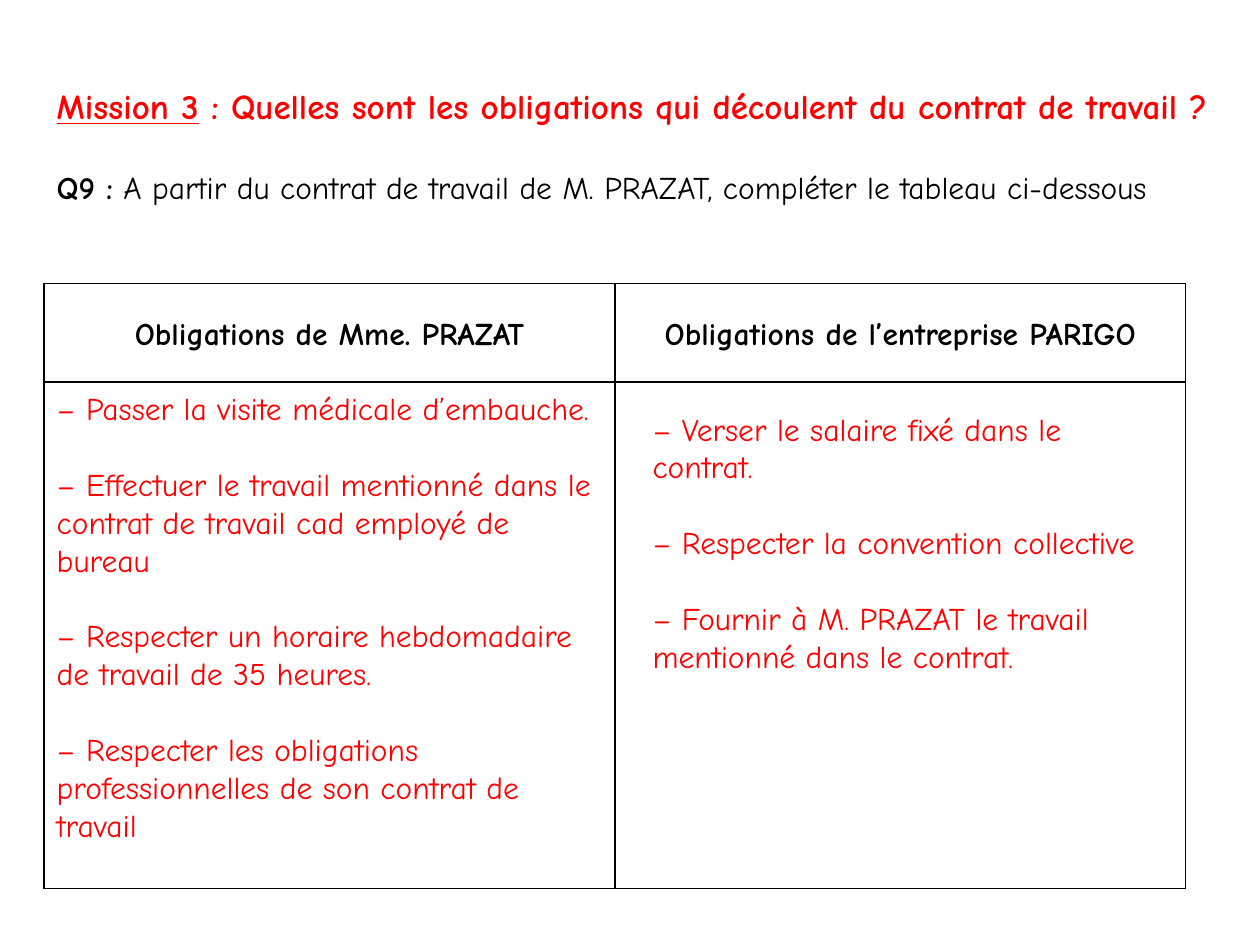
from lxml.etree import SubElement
from pptx import Presentation
from pptx.dml.color import RGBColor
from pptx.enum.text import MSO_ANCHOR, MSO_AUTO_SIZE, PP_ALIGN
from pptx.oxml.ns import qn
from pptx.util import Cm, Pt

FONT = "Comic Neue"
RED = RGBColor(0xFF, 0x00, 0x00)
BLACK = RGBColor(0x00, 0x00, 0x00)
LINE_GAP = Pt(21.7)

HEADINGS = ["Obligations de Mme. PRAZAT", "Obligations de l’entreprise PARIGO"]
EMPLOYEE_DUTIES = [
    "– Passer la visite médicale d’embauche.",
    "– Effectuer le travail mentionné dans le contrat de travail cad employé de bureau",
    "– Respecter un horaire hebdomadaire de travail de 35 heures.",
    "– Respecter les obligations professionnelles de son contrat de travail",
]
EMPLOYER_DUTIES = [
    "– Verser le salaire fixé dans le contrat.",
    "– Respecter la convention collective",
    "– Fournir à M. PRAZAT le travail mentionné dans le contrat.",
]


def style(span, size, color, bold=False, underline=False):
    span.font.name = FONT
    span.font.size = Pt(size)
    span.font.color.rgb = color
    span.font.bold = bold
    span.font.underline = underline


def place(holder, box, anchor):
    holder.left, holder.top, holder.width, holder.height = map(Cm, box)
    frame = holder.text_frame
    frame.word_wrap = True
    frame.auto_size = MSO_AUTO_SIZE.NONE
    frame.vertical_anchor = anchor
    return frame


def format_para(para, gap):
    para.alignment = PP_ALIGN.LEFT
    para.line_spacing = 1.0
    para.space_before = gap
    para.space_after = Pt(0)


def add_heading(page, box):
    """Mission title followed by the question."""
    frame = place(page.shapes.title, box, MSO_ANCHOR.MIDDLE)
    frame.margin_bottom = Cm(0.89)
    mission = frame.paragraphs[0]
    question = frame.add_paragraph()
    format_para(mission, Pt(0))
    format_para(question, Pt(24))
    parts = [
        (mission, "Mission 3", 20, RED, True, True),
        (mission, " : Quelles sont les obligations qui découlent du contrat de travail ?",
         20, RED, True, False),
        (question, "Q9 :", 18, BLACK, True, False),
        (question, " A partir du contrat de travail de M. PRAZAT, compléter le tableau ci-dessous",
         18, BLACK, False, False),
    ]
    for para, text, *look in parts:
        span = para.add_run()
        span.text = text
        style(span, *look)


def add_duties(holder, box, duties):
    """List of obligations, without bullets."""
    frame = place(holder, box, MSO_ANCHOR.TOP)
    frame.text = "\n".join(duties)
    for index, para in enumerate(frame.paragraphs):
        format_para(para, LINE_GAP if index else Pt(0))
        props = para._p.get_or_add_pPr()
        props.set("marL", "0")
        props.set("indent", "0")
        SubElement(props, qn("a:buNone"))
        style(para.runs[0], 18, RED)


def add_borders(cell):
    props = cell._tc.get_or_add_tcPr()
    for side in ("lnL", "lnR", "lnT", "lnB"):
        line = SubElement(props, qn(f"a:{side}"), w=str(Pt(1)))
        fill = SubElement(line, qn("a:solidFill"))
        SubElement(fill, qn("a:srgbClr"), val=str(BLACK))


def add_grid(page, box, head_height):
    """Two-column table with a heading row."""
    left, top, width, height = box
    table = page.shapes.add_table(2, 2, *map(Cm, box)).table
    table.first_row = table.horz_banding = False
    for column in table.columns:
        column.width = Cm(width / 2)
    table.rows[0].height = Cm(head_height)
    table.rows[1].height = Cm(height - head_height)
    for cell in table.iter_cells():
        add_borders(cell)
        cell.fill.background()
    for cell, text in zip(table.rows[0].cells, HEADINGS):
        cell.text_frame.text = text
        cell.vertical_anchor = MSO_ANCHOR.MIDDLE
        cell.margin_left = cell.margin_right = Cm(0.18)
        cell.margin_top = cell.margin_bottom = 0
        para = cell.text_frame.paragraphs[0]
        para.alignment = PP_ALIGN.CENTER
        para.line_spacing = 1.15
        style(para.runs[0], 18, BLACK, bold=True)


def main():
    deck = Presentation()
    deck.slide_width, deck.slide_height = Cm(25.4), Cm(19.05)
    page = deck.slides.add_slide(deck.slide_layouts.get_by_name("Two Content"))
    add_grid(page, (0.89, 5.72, 23.01, 12.19), 1.98)
    add_heading(page, (0.89, 0.74, 24.51, 5.13))
    add_duties(page.placeholders[1], (0.89, 7.72, 11.61, 10.26), EMPLOYEE_DUTIES)
    add_duties(page.placeholders[2], (12.9, 8.13, 10.39, 6.4), EMPLOYER_DUTIES)
    deck.save("out.pptx")


if __name__ == "__main__":
    main()
